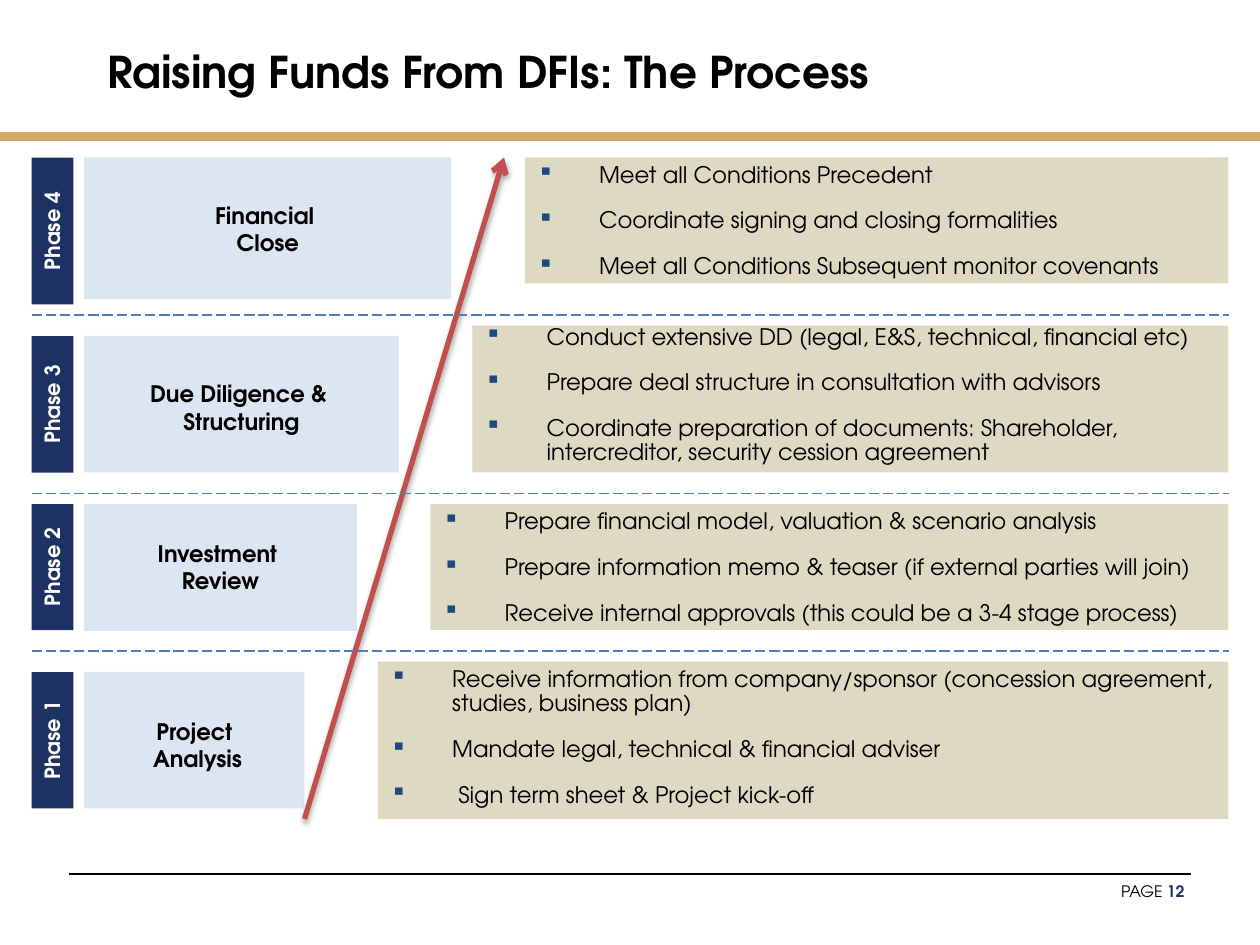
from lxml.etree import SubElement
from pptx import Presentation
from pptx.dml.color import RGBColor
from pptx.enum.dml import MSO_LINE
from pptx.enum.shapes import MSO_CONNECTOR, MSO_SHAPE
from pptx.enum.text import MSO_ANCHOR, MSO_AUTO_SIZE, PP_ALIGN
from pptx.oxml.ns import qn
from pptx.util import Inches, Pt

BLACK = RGBColor(0x00, 0x00, 0x00)
WHITE = RGBColor(0xFF, 0xFF, 0xFF)
NAVY = RGBColor(0x1D, 0x32, 0x62)
GOLD = RGBColor(0xD2, 0xAC, 0x67)
SAND = RGBColor(0xDD, 0xD9, 0xC3)
PALE = RGBColor(0xDC, 0xE6, 0xF2)
BLUE = RGBColor(0x4B, 0x7E, 0xBC)
RED = RGBColor(0xC0, 0x50, 0x4D)
MARK = RGBColor(0x1F, 0x49, 0x7D)

FONT = "TeX Gyre Adventor"
CELL = Inches(10) / 120  # grid of 120 columns by 90 rows
LEFT, RIGHT = 3, 117
TAB, STAGE, GAP = 4, 8, 7  # tab width, stage left edge, stage-to-task gap

# label, stage lines, stage width, (top, tab rows, stage rows), stage inset,
# (task top, rows), task inset, tasks
PHASES = [
    ("Phase 4", ["Financial ", "Close"], 35, (15, 14, 13.5), 0.35, (15, 12), 0.05,
     ["Meet all Conditions Precedent",
      "Coordinate signing and closing formalities",
      "Meet all Conditions Subsequent monitor covenants"]),
    ("Phase 3", ["Due Diligence & ", "Structuring"], 30, (32, 13, 13), 0.35, (31, 14), 0,
     ["Conduct extensive DD (legal, E&S, technical, financial etc)",
      "Prepare deal structure in consultation with advisors",
      "Coordinate preparation of documents: Shareholder, "
      "intercreditor, security cession agreement"]),
    ("Phase 2", ["Investment ", "Review"], 26, (48, 12, 12.1), 0.28, (48, 12), 0.05,
     ["Prepare financial model, valuation & scenario analysis",
      "Prepare information memo & teaser (if external parties will join)",
      "Receive internal approvals (this could be a 3-4 stage process)"]),
    ("Phase 1", ["Project", " Analysis"], 21, (64, 13, 13), 0.36, (63, 15), 0.05,
     ["Receive information from company/sponsor (concession agreement, "
      "studies, business plan)",
      "Mandate legal, technical & financial adviser",
      " Sign term sheet & Project kick-off"]),
]


def grid(*cells):
    return [round(cell * CELL) for cell in cells]


def apply(item, style):
    for name, value in style.items():
        setattr(item, name, value)


class Sheet:
    def __init__(self, deck):
        self.slide = deck.slides.add_slide(deck.slide_layouts[5])
        self.shapes = self.slide.shapes

    def style(self, item, size, color=BLACK, bold=False):
        apply(item.font, {"name": FONT, "size": Pt(size), "bold": bold})
        item.font.color.rgb = color

    def frame(self, shape, anchor, sides=0.1, top=0.05):
        apply(shape.text_frame, {
            "word_wrap": True, "auto_size": MSO_AUTO_SIZE.NONE,
            "vertical_anchor": anchor,
            "margin_left": Inches(sides), "margin_right": Inches(sides),
            "margin_top": Inches(top), "margin_bottom": 0})
        return shape.text_frame

    def title(self, text, *place):
        shape = self.shapes.title
        apply(shape, dict(zip(("left", "top", "width", "height"), grid(*place))))
        self.label(self.frame(shape, MSO_ANCHOR.MIDDLE), [text], 25)

    def box(self, place, fill):
        shape = self.shapes.add_shape(MSO_SHAPE.RECTANGLE, *grid(*place))
        shape.shadow.inherit = False
        shape.fill.solid()
        shape.fill.fore_color.rgb = fill
        shape.line.fill.background()
        return shape

    def label(self, frame, lines, size, color=BLACK, bold=True, align=PP_ALIGN.CENTER):
        for num, line in enumerate(lines):
            para = frame.add_paragraph() if num else frame.paragraphs[0]
            apply(para, {"text": line, "alignment": align})
            self.style(para.runs[0], size, color, bold)

    def tab(self, text, top, rows):
        mid = top + rows / 2
        shape = self.box((LEFT + TAB / 2 - rows / 2, mid - TAB / 2, rows, TAB), NAVY)
        shape.rotation = 270
        self.label(self.frame(shape, MSO_ANCHOR.MIDDLE, 0, 0), [text], 12, WHITE)

    def stage(self, lines, place, inset):
        shape = self.box(place, PALE)
        self.label(self.frame(shape, MSO_ANCHOR.TOP, top=inset), lines, 13)

    def tasks(self, lines, place, inset):
        frame = self.frame(self.box(place, SAND), MSO_ANCHOR.TOP, top=inset)
        self.label(frame, lines, 13, bold=False, align=PP_ALIGN.LEFT)
        for num, para in enumerate(frame.paragraphs):
            props = para._p.get_or_add_pPr()
            props.set("marL", str(Inches(0.49)))
            props.set("indent", str(-Inches(0.49)))
            tint = SubElement(props, qn("a:buClr"))
            SubElement(tint, qn("a:srgbClr"), val=str(MARK))
            SubElement(props, qn("a:buChar"), char="▪")
            apply(para, {"line_spacing": 0.9, "space_before": Pt(12 if num else 0)})

    def line(self, ends, color, width, dash=None):
        rule = self.shapes.add_connector(MSO_CONNECTOR.STRAIGHT, *grid(*ends))
        rule.line.color.rgb = color
        apply(rule.line, {"width": Pt(width), "dash_style": dash})
        return rule, SubElement(rule._element.spPr, qn("a:effectLst"))

    def arrow(self, ends, color, width):
        rule, effects = self.line(ends, color, width)
        SubElement(rule._element.spPr.find(qn("a:ln")), qn("a:tailEnd"), type="arrow")
        shade = SubElement(effects, qn("a:outerShdw"), blurRad=str(Pt(3.1)),
                           dist=str(Pt(1.8)), dir="5400000", rotWithShape="0")
        tint = SubElement(shade, qn("a:srgbClr"), val=str(BLACK))
        SubElement(tint, qn("a:alpha"), val="35000")

    def page(self, number, *place):
        shape = self.shapes.add_textbox(*grid(*place))
        para = self.frame(shape, MSO_ANCHOR.TOP).paragraphs[0]
        para.alignment = PP_ALIGN.RIGHT
        for text, color, bold in (("PAGE ", BLACK, False), (number, NAVY, True)):
            run = para.add_run()
            run.text = text
            self.style(run, 9, color, bold)


def main():
    deck = Presentation()
    deck.slide_width, deck.slide_height = Inches(10), Inches(7.5)
    sheet = Sheet(deck)

    # Header and footer
    sheet.title("Raising Funds From DFIs: The Process", 0, 2, 93, 9)
    sheet.line((0, 13, 120, 13), GOLD, 5)
    sheet.line((6.6, 83.25, 113.4, 83.25), BLACK, 0.75)
    sheet.page("12", 86, 83.4, 28, 4.8)

    # Phases, from last to first
    for label, name, width, (top, tall, rows), pad, (start, deep), inset, tasks in PHASES:
        sheet.tab(label, top, tall)
        sheet.stage(name, (STAGE, top, width, rows), pad)
        left = STAGE + width + GAP
        sheet.tasks(tasks, (left, start, RIGHT - left, deep), inset)

    # Rising arrow and dividers
    sheet.arrow((29, 78, 48, 15), RED, 3)
    for row in (30, 47, 62):
        sheet.line((LEFT, row, RIGHT, row), BLUE, 0.75, MSO_LINE.LONG_DASH)

    deck.save("out.pptx")


if __name__ == "__main__":
    main()
